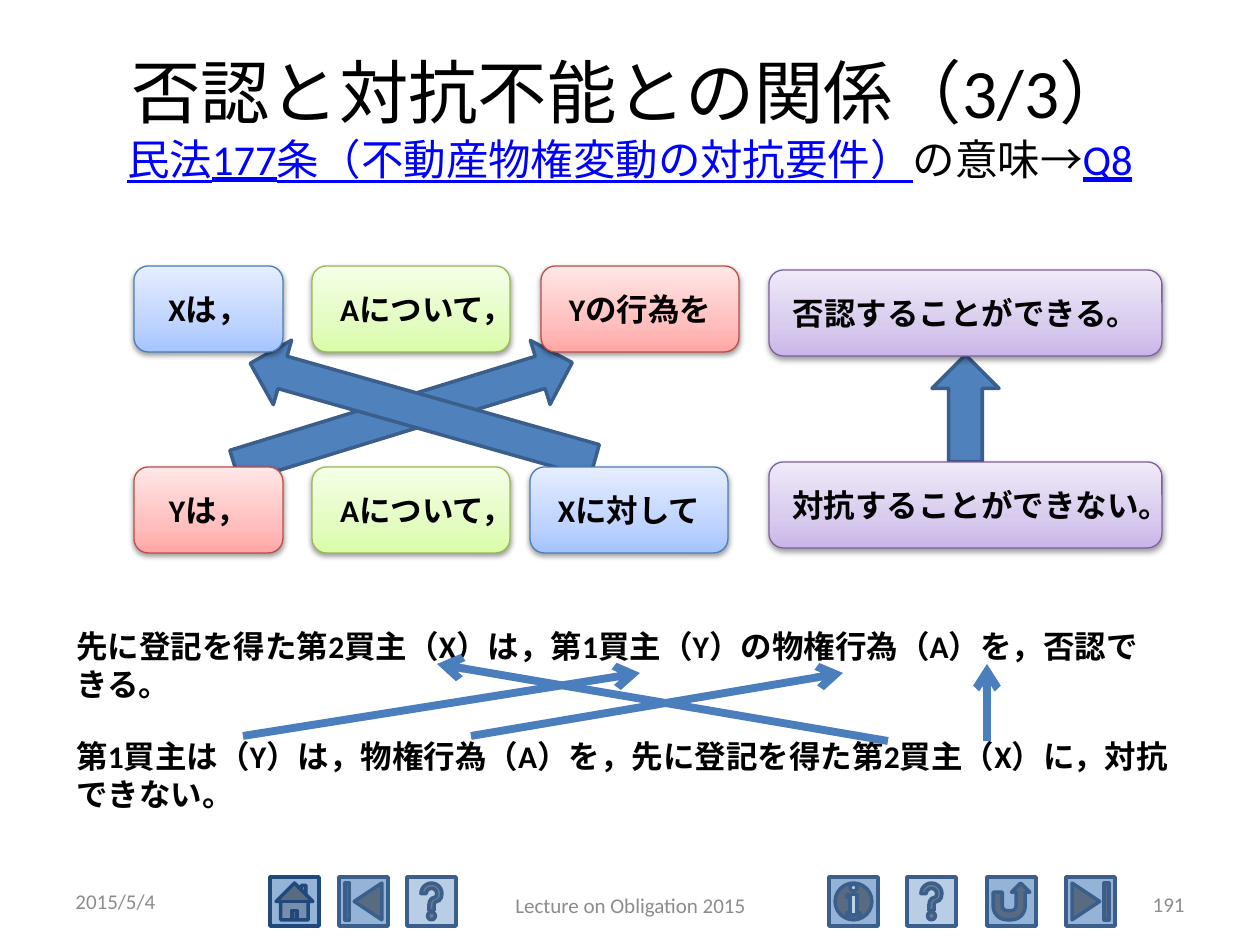
import copy

import pptx
import pptx.dml.color
import pptx.enum.dml
import pptx.enum.lang
import pptx.enum.shapes
import pptx.enum.text
import pptx.oxml
import pptx.oxml.ns
import pptx.util

RGB = pptx.dml.color.RGBColor
KIND = pptx.enum.shapes.MSO_SHAPE
ALIGN = pptx.enum.text.PP_ALIGN
ANCHOR = pptx.enum.text.MSO_ANCHOR
qn = pptx.oxml.ns.qn

BLACK = RGB(0x00, 0x00, 0x00)
GRAY = RGB(0x8C, 0x8C, 0x8C)
LINK = RGB(0x00, 0x00, 0xFF)
NAVY = RGB(0x1F, 0x49, 0x7D)
EDGE = RGB(0x3A, 0x5F, 0x8C)
ARROW = RGB(0x4F, 0x81, 0xBD)
STROKE = RGB(0x4B, 0x7E, 0xBC)
BUTTON = RGB(0x95, 0xB3, 0xD7)
PALE = RGB(0xB9, 0xCD, 0xE5)

# Box palettes: border, then gradient from bottom to top
STOPS = (0, 0.35, 1)
BLUE = (STROKE, RGB(0xA4, 0xC4, 0xFF), RGB(0xBF, 0xD4, 0xFF), RGB(0xE6, 0xEE, 0xFF))
GREEN = (RGB(0x98, 0xB9, 0x55), RGB(0xDA, 0xFD, 0xA7), RGB(0xE4, 0xFC, 0xC2), RGB(0xF5, 0xFF, 0xE7))
RED = (RGB(0xBF, 0x4C, 0x48), RGB(0xFF, 0xA6, 0xA5), RGB(0xFF, 0xC0, 0xBF), RGB(0xFF, 0xE7, 0xE7))
PURPLE = (RGB(0x7D, 0x60, 0xA0), RGB(0xC9, 0xB5, 0xE8), RGB(0xD8, 0xCB, 0xEE), RGB(0xF0, 0xEA, 0xF9))

# Content; lengths in px, 126 to the inch
TITLE = ("否認と対抗不能との関係（3/3）", 39.6)
SUBTITLE = [
    ("民法177条（不動産物権変動の対抗要件）", LINK, True),
    ("の意味→", BLACK, False),
    ("Q8", LINK, True),
]
SUBTITLE_SIZE = 24.3

BUTTON_TOP, BUTTON_SIZE = 877, 49
BUTTONS = [
    (KIND.ACTION_BUTTON_HOME, 270, BUTTON, NAVY),
    (KIND.ACTION_BUTTON_BEGINNING, 339, BUTTON, EDGE),
    (KIND.ACTION_BUTTON_HELP, 407, PALE, EDGE),
    (KIND.ACTION_BUTTON_INFORMATION, 829, BUTTON, EDGE),
    (KIND.ACTION_BUTTON_HELP, 907, PALE, EDGE),
    (KIND.ACTION_BUTTON_RETURN, 987, BUTTON, EDGE),
    (KIND.ACTION_BUTTON_END, 1066, BUTTON, EDGE),
]
FOOTERS = [
    ("2015/5/4", (63, 876, 294, 50), ALIGN.LEFT),
    ("Lecture on Obligation 2015", (431, 880, 399, 50), ALIGN.CENTER),
    ("191", (903, 879, 294, 50), ALIGN.RIGHT),
]
BLOCK_ARROWS = [
    ((370, 238, 67, 353), 72.9),
    ((389, 233, 67, 358), 285.8),
    ((932, 355, 67, 107), 0),
]
BOX_HEIGHT = 86
BOXES = [
    ("Xは，", 134, 266, 149, BLUE),
    ("Aについて，", 312, 266, 198, GREEN),
    ("Yの行為を", 541, 266, 198, RED),
    ("否認することができる。", 769, 270, 393, PURPLE),
    ("Yは，", 134, 467, 149, RED),
    ("Aについて，", 312, 467, 198, GREEN),
    ("Xに対して", 530, 467, 198, BLUE),
    ("対抗することができない。", 769, 462, 393, PURPLE),
]
SENTENCES = [
    ("先に登記を得た第2買主（X）は，第1買主（Y）の物権行為（A）を，否認できる。", 621),
    ("第1買主は（Y）は，物権行為（A）を，先に登記を得た第2買主（X）に，対抗できない。", 731),
]
LINKS = [
    ((888, 741), (437, 664)),
    ((471, 736), (843, 673)),
    ((243, 736), (640, 673)),
    ((987, 741), (987, 664)),
]

SCALE = 914400 / 126


def emu(*lengths):
    return [pptx.util.Emu(round(length * SCALE)) for length in lengths]


def write(para, text, size, color=BLACK, bold=False, underline=False):
    span = para.add_run()
    span.text = text
    look = {
        "name": "Calibri", "size": pptx.util.Pt(size), "bold": bold, "underline": underline,
        "language_id": pptx.enum.lang.MSO_LANGUAGE_ID.JAPANESE,
    }
    for name, value in look.items():
        setattr(span.font, name, value)
    span.font.color.rgb = color


def add_shape(page, kind, place, edge, width, fill=None):
    shape = page.shapes.add_shape(kind, *emu(*place))
    shape.shadow.inherit = False
    shape.line.color.rgb = edge
    shape.line.width = pptx.util.Pt(width)
    if fill is not None:
        shape.fill.solid()
        shape.fill.fore_color.rgb = fill
    return shape


def add_text(page, text, place, size, color, align, anchor, bold=False):
    frame = page.shapes.add_textbox(*emu(*place)).text_frame
    frame.word_wrap = True
    frame.vertical_anchor = anchor
    frame.paragraphs[0].alignment = align
    write(frame.paragraphs[0], text, size, color, bold)


def shade(shape, colors):
    """Three-stop vertical gradient and a soft shadow below."""
    shape.fill.gradient()
    shape.fill.gradient_angle = 90
    properties = shape._element.spPr
    stop_list = properties.find(".//" + qn("a:gsLst"))
    stop_list.append(copy.deepcopy(stop_list[-1]))
    for stop, position, color in zip(shape.fill.gradient_stops, STOPS, colors):
        stop.position = position
        stop.color.rgb = color
    effects = properties.find(qn("a:effectLst"))
    shadow = pptx.oxml.ns.nsdecls("a")
    effects.append(pptx.oxml.parse_xml(
        f'<a:outerShdw {shadow} blurRad="40000" dist="20000" dir="5400000" rotWithShape="0">'
        '<a:srgbClr val="000000"><a:alpha val="38000"/></a:srgbClr></a:outerShdw>'))


def main():
    deck = pptx.Presentation()
    deck.slide_width, deck.slide_height = emu(1260, 945)
    page = deck.slides.add_slide(deck.slide_layouts[5])

    # Navigation buttons
    for kind, left, fill, edge in BUTTONS:
        add_shape(page, kind, (left, BUTTON_TOP, BUTTON_SIZE, BUTTON_SIZE), edge, 2, fill)

    # Title
    title = page.shapes.title
    title.left, title.top, title.width, title.height = emu(63, 38, 1134, 157)
    title.text_frame.auto_size = pptx.enum.text.MSO_AUTO_SIZE.NONE
    title.text_frame.vertical_anchor = ANCHOR.MIDDLE
    para = title.text_frame.paragraphs[0]
    para.alignment = ALIGN.CENTER
    write(para, *TITLE)
    para.add_line_break()
    for text, color, underline in SUBTITLE:
        write(para, text, SUBTITLE_SIZE, color, underline=underline)

    # Footer
    for text, place, align in FOOTERS:
        add_text(page, text, place, 12, GRAY, align, ANCHOR.MIDDLE)

    # Block arrows
    for place, angle in BLOCK_ARROWS:
        add_shape(page, KIND.UP_ARROW, place, EDGE, 2, ARROW).rotation = angle

    # Sentences
    for text, top in SENTENCES:
        add_text(page, text, (64, top, 1116, 50), 18, BLACK, ALIGN.LEFT, ANCHOR.TOP, True)

    # Arrows between the sentences
    for start, end in LINKS:
        link = page.shapes.add_connector(
            pptx.enum.shapes.MSO_CONNECTOR.STRAIGHT, *emu(*start, *end))
        link.line.color.rgb = STROKE
        link.line.width = pptx.util.Pt(4.5)
        tail = pptx.oxml.ns.nsdecls("a")
        link.line._get_or_add_ln().append(
            pptx.oxml.parse_xml(f'<a:tailEnd {tail} type="arrow"/>'))
        link._element.spPr.append(pptx.oxml.parse_xml(f"<a:effectLst {tail}/>"))

    # Phrase boxes
    for text, left, top, width, (edge, *colors) in BOXES:
        box = add_shape(page, KIND.ROUNDED_RECTANGLE, (left, top, width, BOX_HEIGHT), edge, 0.75)
        shade(box, colors)
        box.text_frame.word_wrap = True
        para = box.text_frame.paragraphs[0]
        para.alignment = ALIGN.CENTER
        write(para, text, 18, bold=True)

    deck.save("out.pptx")


if __name__ == "__main__":
    main()
